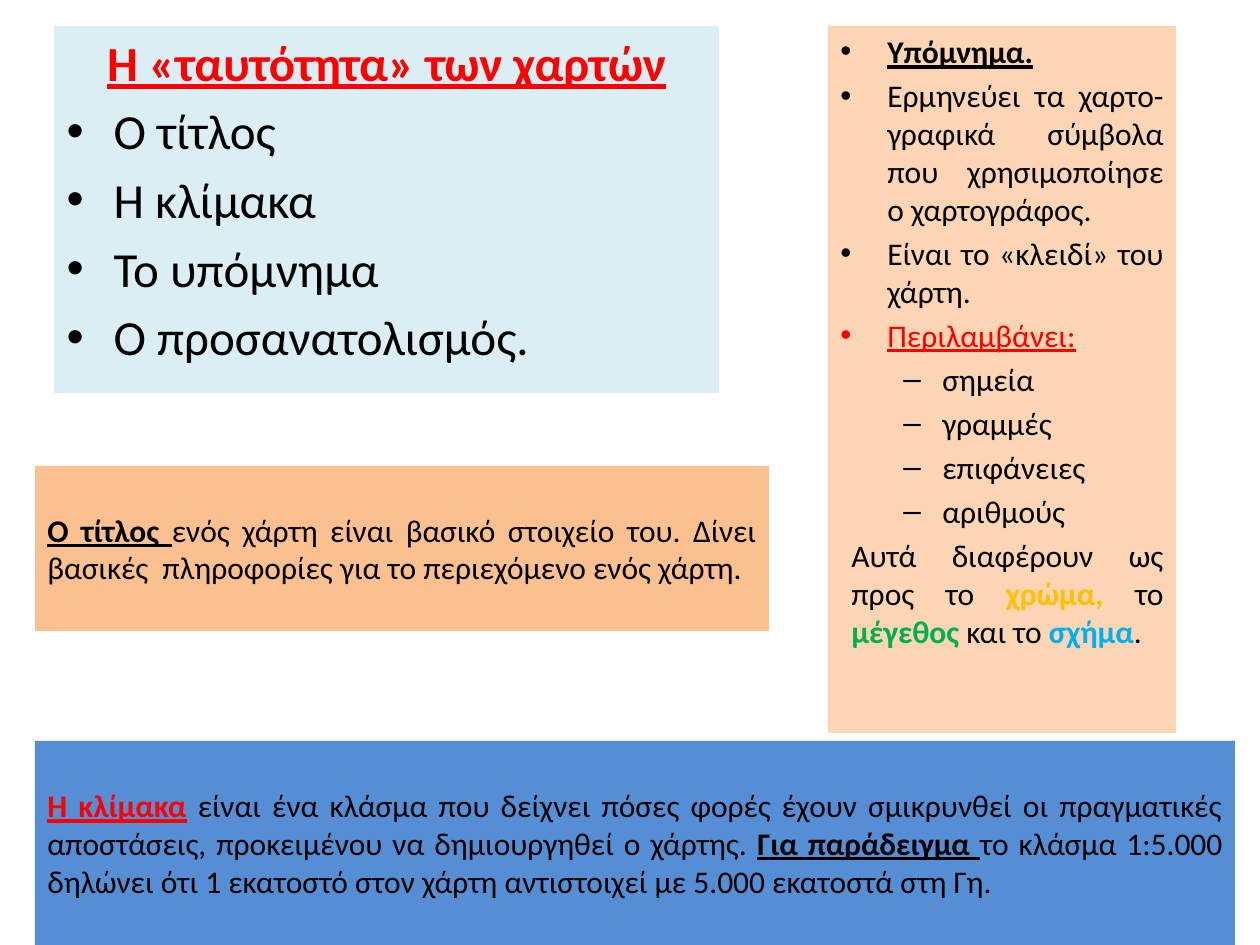
from lxml.etree import SubElement
from pptx import Presentation
from pptx.dml.color import RGBColor
from pptx.enum.text import MSO_ANCHOR as Anchor, MSO_AUTO_SIZE as AutoSize, PP_ALIGN as Align
from pptx.oxml.ns import qn
from pptx.util import Emu, Pt

PX_PER_INCH = 126
COLORS = {
    "identity": "DBEEF4", "legend": "FCD5B5", "scale": "558ED5", "title": "FAC090",
    "black": "000000", "red": "FF0000", "gold": "FFC000", "green": "00B050", "sky": "00B0F0",
}
KEY = {"bold": True, "underline": True}
RED_KEY = {**KEY, "color": "red"}

HEADING = {"align": Align.CENTER}
POINT = {"bullet": "•", "left": 47, "hanging": 47}
LEGEND_POINT = {**POINT, "align": Align.JUSTIFY}
LEGEND_DASH = {"bullet": "–", "left": 102, "hanging": 39, "align": Align.JUSTIFY}
LEGEND_NOTE = {"left": 11, "align": Align.JUSTIFY}
PROSE = {"align": Align.JUSTIFY}

IDENTITY = [(HEADING, [("Η «ταυτότητα» των χαρτών", RED_KEY)])] + [
    (POINT, [(text, {})])
    for text in ("Ο τίτλος", "Η κλίμακα", "Το υπόμνημα", "Ο προσανατολισμός.")
]
LEGEND = [
    (LEGEND_POINT, [("Υπόμνημα.", KEY)]),
    (LEGEND_POINT, [("Ερμηνεύει τα χαρτο-γραφικά σύμβολα που χρησιμοποίησε ο χαρτογράφος.", {})]),
    (LEGEND_POINT, [("Είναι το «κλειδί» του χάρτη.", {})]),
    (LEGEND_POINT, [("Περιλαμβάνει:", {"underline": True, "color": "red"})]),
    *[(LEGEND_DASH, [(text, {})]) for text in ("σημεία", "γραμμές", "επιφάνειες", "αριθμούς")],
    (LEGEND_NOTE, [
        ("Αυτά διαφέρουν ως προς το ", {}),
        ("χρώμα,", {"bold": True, "color": "gold"}),
        (" το ", {}),
        ("μέγεθος", {"bold": True, "color": "green"}),
        (" και το ", {}),
        ("σχήμα", {"bold": True, "color": "sky"}),
        (".", {}),
    ]),
]
SCALE = [(PROSE, [
    ("Η κλίμακα", RED_KEY),
    (" είναι ένα κλάσμα που δείχνει πόσες φορές έχουν σμικρυνθεί οι πραγματικές "
     "αποστάσεις, προκειμένου να δημιουργηθεί ο χάρτης. ", {}),
    ("Για παράδειγμα ", KEY),
    ("το κλάσμα 1:5.000 δηλώνει ότι 1 εκατοστό στον χάρτη αντιστοιχεί με "
     "5.000 εκατοστά στη Γη.", {}),
])]
TITLE = [(PROSE, [
    ("Ο τίτλος ", KEY),
    ("ενός χάρτη είναι βασικό στοιχείο του. Δίνει βασικές  πληροφορίες για το "
     "περιεχόμενο ενός χάρτη.", {}),
])]


def px(value):
    return Emu(round(value * 914400 / PX_PER_INCH))


class MapSlide:
    font_name = "Calibri"
    space_ratio = 0.2

    def __init__(self, presentation):
        self.slide = presentation.slides.add_slide(presentation.slide_layouts[1])
        title = self.slide.shapes.title
        title.element.getparent().remove(title.element)

    def body(self, box, fill, size, paragraphs):
        self.panel(self.slide.placeholders[1], box, fill, size, paragraphs, Anchor.TOP)

    def text_box(self, box, fill, size, paragraphs, anchor=Anchor.MIDDLE):
        shape = self.slide.shapes.add_textbox(*map(px, box))
        self.panel(shape, box, fill, size, paragraphs, anchor)

    def panel(self, shape, box, fill, size, paragraphs, anchor):
        for name, value in zip(("left", "top", "width", "height"), box):
            setattr(shape, name, px(value))
        shape.fill.solid()
        shape.fill.fore_color.rgb = RGBColor.from_string(COLORS[fill])
        frame = shape.text_frame
        settings = {"word_wrap": True, "auto_size": AutoSize.NONE, "vertical_anchor": anchor}
        for name, value in settings.items():
            setattr(frame, name, value)
        for index, (style, runs) in enumerate(paragraphs):
            paragraph = frame.add_paragraph() if index else frame.paragraphs[0]
            self.paragraph(paragraph, style, size, runs, size * self.space_ratio if index else 0)

    def paragraph(self, paragraph, style, size, runs, space):
        properties = paragraph._p.get_or_add_pPr()
        properties.set("marL", str(px(style.get("left", 0))))
        properties.set("indent", str(-px(style.get("hanging", 0))))
        if "bullet" in style:
            SubElement(properties, qn("a:buFont")).set("typeface", "Arial")
            SubElement(properties, qn("a:buChar")).set("char", style["bullet"])
        else:
            SubElement(properties, qn("a:buNone"))
        paragraph.alignment = style.get("align", Align.LEFT)
        paragraph.space_before = Pt(space)
        for text, emphasis in runs:
            self.run(paragraph, text, size, emphasis)

    def run(self, paragraph, text, size, emphasis):
        run = paragraph.add_run()
        run.text = text
        values = {"name": self.font_name, "size": Pt(size), "bold": False, "underline": False,
                  "color": "black", **emphasis}
        run.font.color.rgb = RGBColor.from_string(COLORS[values.pop("color")])
        for name, value in values.items():
            setattr(run.font, name, value)


def main():
    presentation = Presentation()
    presentation.slide_width, presentation.slide_height = px(1260), px(945)
    slide = MapSlide(presentation)
    slide.body((54, 26, 665, 367), "identity", 28, IDENTITY)
    slide.text_box((828, 26, 348, 707), "legend", 18, LEGEND, Anchor.TOP)
    slide.text_box((35, 741, 1200, 204), "scale", 18, SCALE)
    slide.text_box((35, 466, 734, 165), "title", 18, TITLE)
    presentation.save("out.pptx")


if __name__ == "__main__":
    main()
